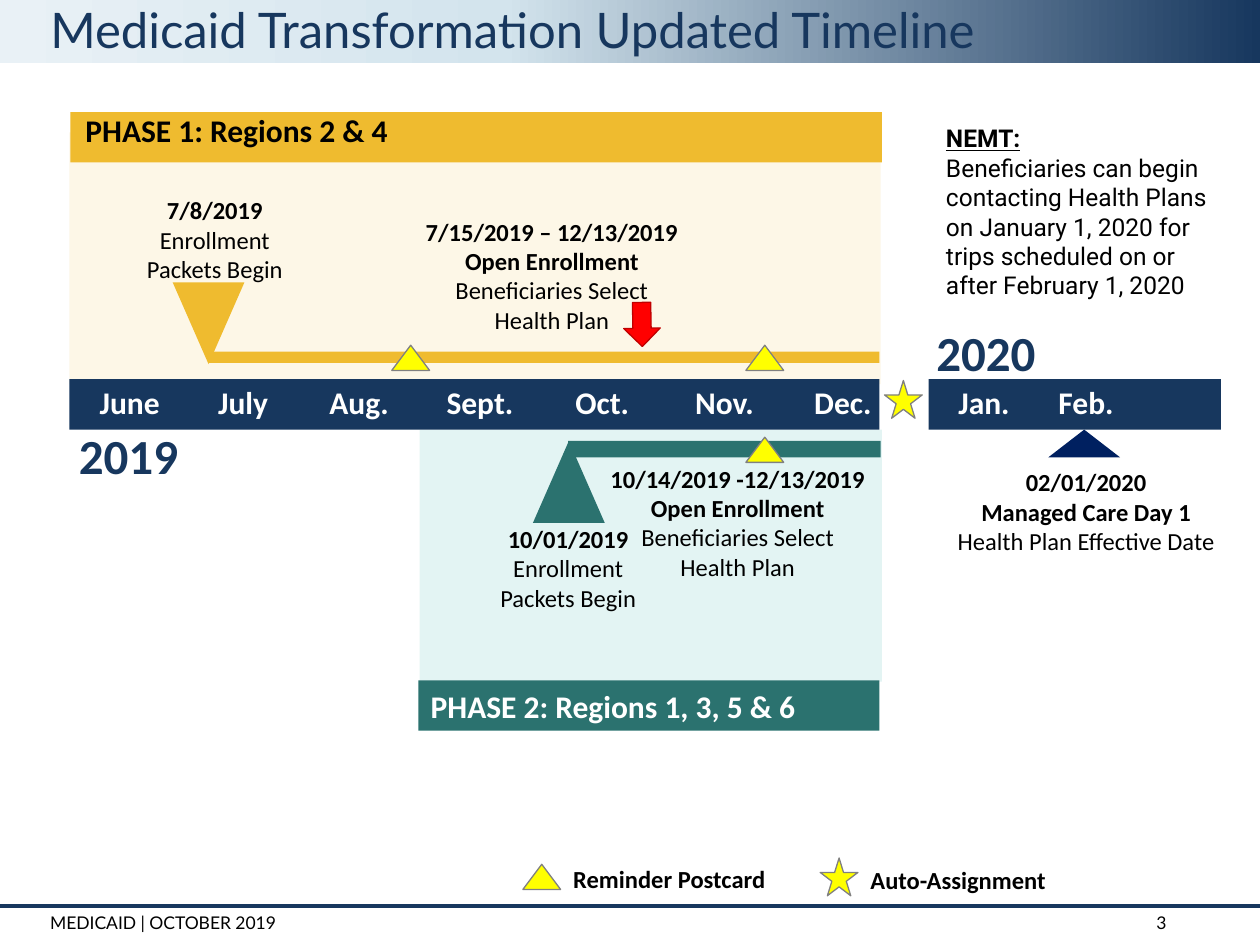
from copy import deepcopy

from pptx import Presentation
from pptx.dml.color import RGBColor
from pptx.enum.shapes import MSO_CONNECTOR, MSO_SHAPE
from pptx.enum.text import MSO_ANCHOR, PP_ALIGN
from pptx.oxml.ns import qn
from pptx.util import Inches, Pt

COLORS = {
    "navy": "17375E", "deep_navy": "002060", "gold": "EFBB2F", "cream": "FDF7E7",
    "teal": "2B726F", "mint": "E3F4F3", "yellow": "FFFF00", "gray": "808080",
    "red": "FF0000", "dark_red": "C00000", "black": "000000", "white": "FFFFFF",
    "sky": "D3E4ED", "ice": "E9F1F6",
}

# Content; boxes are (left, top, width, height) in inches
TITLE = "Medicaid Transformation Updated Timeline"
FOOTERS = [("MEDICAID | OCTOBER 2019", (0.3, 7.19, 8.4, 0.31)),
           ("3", (9.08, 7.19, 0.62, 0.31))]
BANDS = [
    ("mint", (3.33, 3.41, 3.67, 2)),
    ("cream", (0.55, 1.05, 6.44, 2)),
    ("gold", (0.56, 0.89, 6.44, 0.4)),
    ("navy", (7.37, 3.01, 2.32, 0.4)),
    ("navy", (0.55, 3.01, 6.43, 0.4)),
    ("teal", (3.32, 5.4, 3.66, 0.4)),
    ("teal", (4.51, 3.5, 2.48, 0.13)),
    ("gold", (1.66, 2.79, 5.32, 0.09)),
]
POINTERS = [("deep_navy", (8.32, 3.41, 0.57, 0.22), 0),
            ("gold", (1.37, 2.24, 0.57, 0.65), 180),
            ("teal", (4.23, 3.5, 0.57, 0.65), 0)]
MONTHS = [("June", 0.55), ("July", 1.45), ("Aug.", 2.37), ("Sept.", 3.33),
          ("Oct.", 4.3), ("Nov.", 5.27), ("Dec.", 6.21), ("Jan.", 7.33), ("Feb.", 8.14)]
PHASES = [("PHASE 1: Regions 2 & 4", (0.58, 0.83, 8.69, 0.4), "black"),
          ("PHASE 2: Regions 1, 3, 5 & 6", (3.32, 5.4, 3.66, 0.4), "white")]
YEARS = [("2019", (0.38, 3.33, 1.28, 0.57)), ("2020", (7.1, 2.51, 1.45, 0.57))]
# Box, bold lines, regular lines
EVENTS = [
    ((0.63, 1.5, 2.15, 0.81), ["7/8/2019"], ["Enrollment", "Packets Begin"]),
    ((1.79, 1.67, 5.18, 1.04), ["7/15/2019 – 12/13/2019", "Open Enrollment"],
     ["Beneficiaries Select", "Health Plan"]),
    ((3.41, 4.11, 2.2, 0.81), ["10/01/2019"], ["Enrollment", "Packets Begin"]),
    ((4.39, 3.63, 2.93, 1.04), ["10/14/2019 -12/13/2019", "Open Enrollment"],
     ["Beneficiaries Select", "Health Plan"]),
    ((7.46, 3.66, 2.32, 0.81), ["02/01/2020", "Managed Care Day 1"],
     ["Health Plan Effective Date"]),
]
NEMT = ["NEMT:", "Beneficiaries can begin contacting Health Plans on January 1, 2020 "
        "for trips scheduled on or after February 1, 2020"]
POSTCARDS = [(3.11, 2.74), (5.92, 2.74), (5.92, 3.47), (4.15, 6.86)]
STARS = [(7.02, 3.02), (6.51, 6.81)]
LEGEND = [("Reminder Postcard", (4.45, 6.81, 2.28, 0.34)),
          ("Auto-Assignment", (6.81, 6.82, 2.28, 0.34))]


def color(name):
    return RGBColor.from_string(COLORS[name])


def inches(box):
    return [Inches(value) for value in box]


def add_shape(kind, box, fill, line=None, rotation=0):
    shape = slide.shapes.add_shape(kind, *inches(box))
    shape.shadow.inherit = False
    shape.fill.solid()
    shape.fill.fore_color.rgb = color(fill)
    if line:
        shape.line.color.rgb = color(line)
        shape.line.width = Pt(0)
    else:
        shape.line.fill.background()
    shape.rotation = rotation
    return shape


def style(paragraph, size, font, ink, bold=False, align=PP_ALIGN.LEFT):
    paragraph.alignment = align
    paragraph.font.size = Pt(size)
    paragraph.font.name = font
    paragraph.font.bold = bold
    paragraph.font.color.rgb = color(ink)


def add_text(box, lines, size, ink="black", font="Calibri", bold_lines=1, align=PP_ALIGN.LEFT):
    frame = slide.shapes.add_textbox(*inches(box)).text_frame
    frame.word_wrap = True
    frame.text = "\n".join(lines)
    for index, paragraph in enumerate(frame.paragraphs):
        style(paragraph, size, font, ink, index < bold_lines, align)
    return frame


presentation = Presentation()
presentation.slide_width, presentation.slide_height = Inches(10), Inches(7.5)
slide = presentation.slides.add_slide(presentation.slide_layouts[5])
title = slide.shapes.title

# Header band with a three-stop gradient, placed behind the title
header = add_shape(MSO_SHAPE.RECTANGLE, (0, 0, 10, 0.5), "navy")
header.fill.gradient()
header.fill.gradient_angle = 180
stop_list = header.fill._fill._gradFill.find(qn("a:gsLst"))
stop_list.append(deepcopy(stop_list[-1]))
stops = [(0, "navy"), (0.6, "sky"), (1, "ice")]
for stop, (position, name) in zip(header.fill.gradient_stops, stops):
    stop.position = position
    stop.color.rgb = color(name)
title._element.addprevious(header._element)

# Title
title.left, title.top, title.width, title.height = inches((0.3, 0, 8.58, 0.6))
title.text_frame.text = TITLE
title.text_frame.vertical_anchor = MSO_ANCHOR.TOP
style(title.text_frame.paragraphs[0], 28, "Lato", "navy")
title.text_frame.paragraphs[0].line_spacing = 0.9

# Footer
rule = slide.shapes.add_connector(MSO_CONNECTOR.STRAIGHT, *inches((0, 7.19, 10, 7.19)))
rule.line.color.rgb = color("navy")
rule.line.width = Pt(2.25)
rule._element.spPr.append(rule._element.makeelement(qn("a:effectLst"), {}))
for text, box in FOOTERS:
    add_text(box, [text], 10, font="Lato", bold_lines=0)

# Phase areas, month bars and event pointers
for fill, box in BANDS:
    add_shape(MSO_SHAPE.RECTANGLE, box, fill)
for fill, box, rotation in POINTERS:
    add_shape(MSO_SHAPE.ISOSCELES_TRIANGLE, box, fill, rotation=rotation)

# Labels
for month, left in MONTHS:
    add_text((left, 2.99, 0.96, 0.4), [month], 18, "white", align=PP_ALIGN.CENTER)
for text, box, ink in PHASES:
    add_text(box, [text], 18, ink)
for year, box in YEARS:
    add_text(box, [year], 28, "navy", align=PP_ALIGN.CENTER)
for box, bold, regular in EVENTS:
    add_text(box, bold + regular, 14, bold_lines=len(bold), align=PP_ALIGN.CENTER)
note = add_text((7.41, 0.93, 2.36, 1.51), NEMT, 14, font="Roboto")
note.paragraphs[0].font.underline = True

# Markers and legend
add_shape(MSO_SHAPE.UP_ARROW, (4.95, 2.4, 0.29, 0.35), "red", "dark_red", 179)
for left, top in POSTCARDS:
    add_shape(MSO_SHAPE.ISOSCELES_TRIANGLE, (left, top, 0.3, 0.2), "yellow", "gray")
for left, top in STARS:
    add_shape(MSO_SHAPE.STAR_5_POINT, (left, top, 0.3, 0.3), "yellow", "gray")
for text, box in LEGEND:
    add_text(box, [text], 14)

presentation.save("out.pptx")
